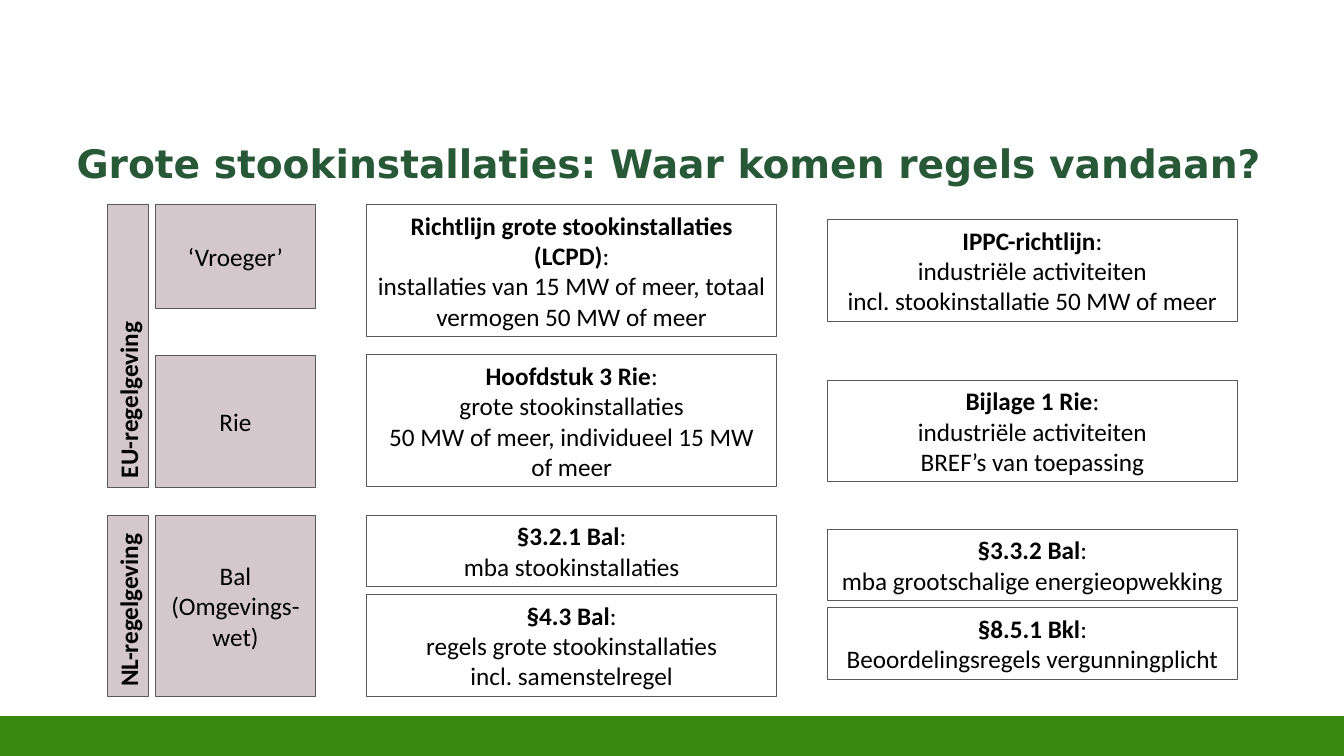
from pptx import Presentation
from pptx.dml.color import RGBColor
from pptx.enum.shapes import MSO_SHAPE as Shape
from pptx.enum.text import MSO_ANCHOR as Anchor, MSO_AUTO_SIZE as AutoSize, PP_ALIGN as Align
from pptx.util import Inches, Pt

GREEN, DARK_GREEN = "39870C", "275937"
MAUVE, GREY, BLACK = "D4C8CD", "595959", "000000"

ROW_TOPS = {"vroeger": 2.03, "rie": 3.53, "bal": 5.11}
STAGE_LEFT, STAGE_WIDTH = 1.54, 1.59
RULE_WIDTH = 4.06
LARGE_PLANT_LEFT, INDUSTRY_LEFT = 3.64, 8.21


def color(hex_string):
    return RGBColor.from_string(hex_string)


class RegulationSlide:
    text_format = {"name": "Calibri", "size": Pt(18)}
    title_format = {"name": "DejaVu Sans", "size": Pt(28), "bold": True}

    def __init__(self, prs):
        self.s = prs.slides.add_slide(prs.slide_layouts[5])

    def style_font(self, font, values, hex_string=BLACK):
        for name, value in values.items():
            setattr(font, name, value)
        font.color.rgb = color(hex_string)

    def title(self, text, left, top, width, height):
        sp = self.s.shapes.title
        sp.left, sp.top, sp.width, sp.height = map(Inches, (left, top, width, height))
        tf = sp.text_frame
        tf.text = text
        tf.word_wrap = True
        tf.vertical_anchor = Anchor.MIDDLE
        p = tf.paragraphs[0]
        p.alignment, p.line_spacing = Align.LEFT, 0.9
        self.style_font(p.runs[0].font, self.title_format, DARK_GREEN)

    def rect(self, left, top, width, height, fill=None, line=GREY, line_width=0.75):
        sp = self.s.shapes.add_shape(Shape.RECTANGLE, *map(Inches, (left, top, width, height)))
        sp.shadow.inherit = False
        if fill:
            sp.fill.solid()
            sp.fill.fore_color.rgb = color(fill)
        else:
            sp.fill.background()
        sp.line.color.rgb = color(line)
        sp.line.width = Pt(line_width)
        return sp

    def set_text(self, sp, paragraphs, align=Align.CENTER):
        """Fill the shape; each paragraph is a list of (text, bold) runs."""
        tf = sp.text_frame
        tf.word_wrap = True
        for i, runs in enumerate(paragraphs):
            p = tf.add_paragraph() if i else tf.paragraphs[0]
            p.alignment = align
            for text, bold in runs:
                r = p.add_run()
                r.text = text
                self.style_font(r.font, {**self.text_format, "bold": bold})
        return tf

    def stage(self, text, top, height):
        sp = self.rect(STAGE_LEFT, top, STAGE_WIDTH, height, MAUVE)
        self.set_text(sp, [[(text, False)]]).vertical_anchor = Anchor.MIDDLE

    def level(self, text, top, length, center=1.27, thickness=0.4):
        """Draw a label that reads upwards, spanning length from top."""
        sp = self.rect(center - length / 2, top + (length - thickness) / 2, length, thickness, MAUVE)
        sp.rotation = 270
        self.set_text(sp, [[(text, True)]], Align.LEFT)

    def rule(self, left, top, line_count, heading, *details):
        """Draw a box with a bold heading, as high as its lines of text."""
        sp = self.rect(left, top, RULE_WIDTH, 0.11 + 0.3 * line_count)
        paragraphs = [[(heading, True), (":", False)]] + [[(text, False)] for text in details]
        self.set_text(sp, paragraphs).auto_size = AutoSize.SHAPE_TO_FIT_TEXT


def main():
    prs = Presentation()
    prs.slide_width, prs.slide_height = Inches(13.33), Inches(7.5)
    s = RegulationSlide(prs)

    s.rect(0, 7.12, 13.33, 0.39, GREEN, GREEN, 2)
    s.title("Grote stookinstallaties: Waar komen regels vandaan?", 0.66, 1.28, 12, 0.73)

    s.level("EU-regelgeving", ROW_TOPS["vroeger"], 2.81)
    s.level("NL-regelgeving", ROW_TOPS["bal"], 1.8)

    s.stage("‘Vroeger’", ROW_TOPS["vroeger"], 1.03)
    s.stage("Rie", ROW_TOPS["rie"], 1.31)
    s.stage("Bal (Omgevings-wet)", ROW_TOPS["bal"], 1.8)

    columns = {
        LARGE_PLANT_LEFT: [
            (2.03, 4, "Richtlijn grote stookinstallaties (LCPD)",
             "installaties van 15 MW of meer, totaal vermogen 50 MW of meer"),
            (3.52, 4, "Hoofdstuk 3 Rie", "grote stookinstallaties",
             "50 MW of meer, individueel 15 MW of meer"),
            (5.11, 2, "§3.2.1 Bal", "mba stookinstallaties"),
            (5.9, 3, "§4.3 Bal", "regels grote stookinstallaties", "incl. samenstelregel"),
        ],
        INDUSTRY_LEFT: [
            (2.18, 3, "IPPC-richtlijn", "industriële activiteiten",
             "incl. stookinstallatie 50 MW of meer"),
            (3.77, 3, "Bijlage 1 Rie", "industriële activiteiten", "BREF’s van toepassing"),
            (5.25, 2, "§3.3.2 Bal", "mba grootschalige energieopwekking"),
            (6.03, 2, "§8.5.1 Bkl", "Beoordelingsregels vergunningplicht"),
        ],
    }
    for left, rules in columns.items():
        for rule in rules:
            s.rule(left, *rule)

    prs.save("out.pptx")


if __name__ == "__main__":
    main()
